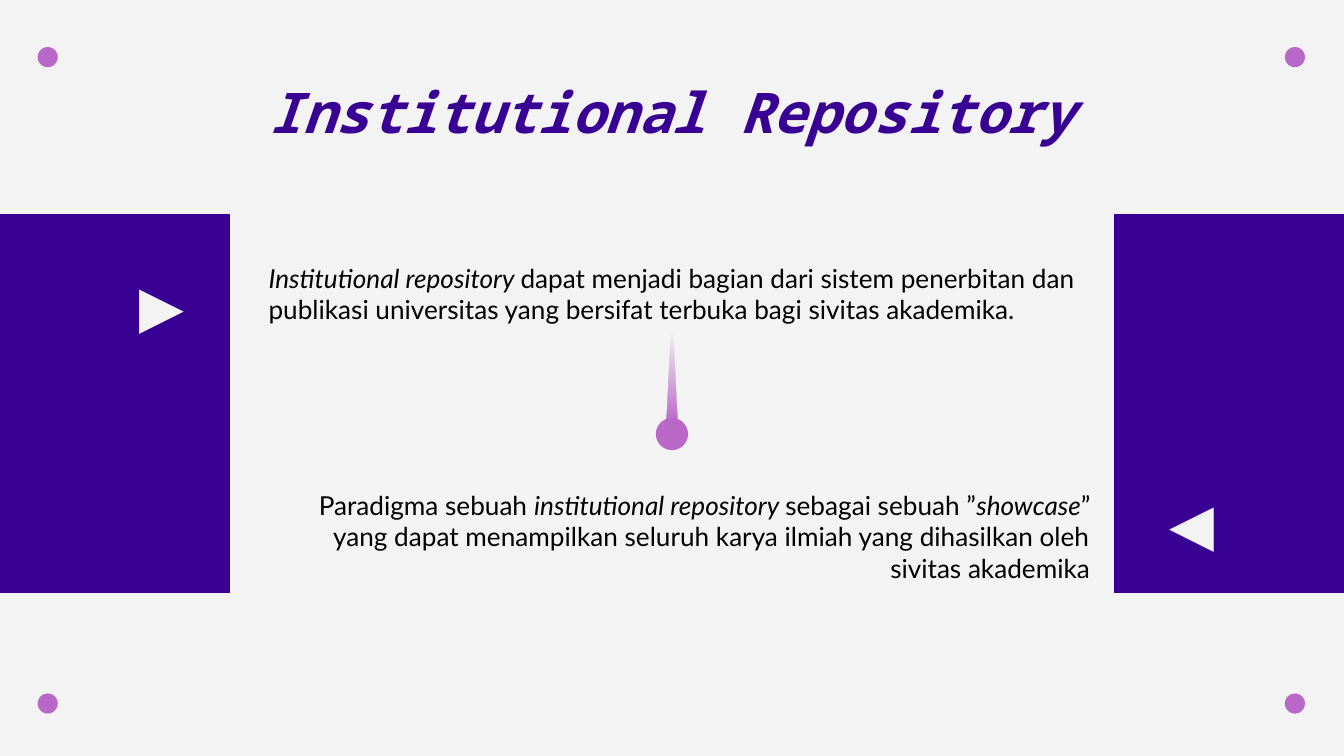
from copy import deepcopy

from lxml.etree import SubElement
from pptx import Presentation
from pptx.dml.color import RGBColor
from pptx.enum.shapes import MSO_SHAPE as SHAPE
from pptx.enum.text import MSO_ANCHOR as ANCHOR, PP_ALIGN as ALIGN
from pptx.oxml.ns import qn
from pptx.util import Inches, Pt

BACKGROUND = RGBColor(0xF3, 0xF3, 0xF3)
PURPLE = RGBColor(0x38, 0x00, 0x93)
ORCHID = RGBColor(0xBA, 0x68, 0xC8)
BLACK = RGBColor(0x00, 0x00, 0x00)
MONO, BODY = "Noto Sans Mono", "Lato"


def place(sp, left, top, width, height):
    sp.left, sp.top = Inches(left), Inches(top)
    sp.width, sp.height = Inches(width), Inches(height)


def add_shape(s, kind, box, color, outlined=False):
    sp = s.shapes.add_shape(kind, *map(Inches, box))
    sp.shadow.inherit = False
    sp.fill.solid()
    sp.fill.fore_color.rgb = color
    if outlined:
        sp.line.color.rgb = color
        sp.line.width = Pt(0.75)
    else:
        sp.line.fill.background()
    return sp


def set_frame(sp, anchor):
    tf = sp.text_frame
    tf.word_wrap = True
    tf.vertical_anchor = anchor
    tf.margin_left = tf.margin_right = Inches(0.1)
    tf.margin_top = tf.margin_bottom = Inches(0.1)
    return tf


def style_run(r, font, size, color, bold=False, italic=False):
    r.font.name, r.font.size = font, Pt(size)
    r.font.color.rgb = color
    r.font.bold, r.font.italic = bold, italic


def set_title(s, text):
    title = s.shapes.title
    place(title, 0.78, 0.59, 8.44, 0.59)
    tf = set_frame(title, ANCHOR.BOTTOM)
    tf.text = text
    p = tf.paragraphs[0]
    p.alignment = ALIGN.CENTER
    style_run(p.runs[0], MONO, 30, PURPLE, bold=True, italic=True)


def add_arrow(s, box, symbol):
    sp = add_shape(s, SHAPE.RECTANGLE, box, PURPLE)
    tf = set_frame(sp, ANCHOR.MIDDLE)
    tf.text = symbol
    p = tf.paragraphs[0]
    p.alignment = ALIGN.CENTER
    style_run(p.runs[0], MONO, 40, BACKGROUND, bold=True)


def add_body(s, box, parts, align, indent=0):
    """Add a paragraph from (text, italic) parts."""
    sp = s.shapes.add_textbox(*map(Inches, box))
    p = set_frame(sp, ANCHOR.TOP).paragraphs[0]
    p.alignment = align
    if indent:
        p._p.get_or_add_pPr().set("marL", str(Inches(indent)))
    for text, italic in parts:
        r = p.add_run()
        r.text = text
        style_run(r, BODY, 14, BLACK, italic=italic)


def fade_upwards(sp, color):
    """Fade from solid at the base to clear at 80 % of the height."""
    sp.fill.gradient()
    sp.fill.gradient_angle = 90
    base, clear = sp.fill.gradient_stops
    base.color.rgb = clear.color.rgb = color
    base.position, clear.position = 0, 0.8
    gs = list(sp._element.iter(qn("a:gs")))[1]
    SubElement(gs[0], qn("a:alpha")).set("val", "0")
    end = deepcopy(gs)
    end.set("pos", "100000")
    gs.addnext(end)


def main():
    prs = Presentation()
    prs.slide_width = Inches(10)
    prs.slide_height = prs.slide_width * 9 // 16
    s = prs.slides.add_slide(prs.slide_layouts[5])
    s.background.fill.solid()
    s.background.fill.fore_color.rgb = BACKGROUND

    # Corner dots and side panels
    for left in (0.28, 9.56):
        for top in (0.35, 5.16):
            add_shape(s, SHAPE.OVAL, (left, top, 0.15, 0.15), ORCHID)
    for left in (0, 8.29):
        add_shape(s, SHAPE.RECTANGLE, (left, 1.6, 1.71, 2.81), PURPLE, outlined=True)

    set_title(s, "Institutional Repository")

    # Statements with their arrows
    add_body(s, (1.75, 1.85, 6.5, 0.56), [
        ("Institutional repository ", True),
        ("dapat menjadi bagian dari sistem penerbitan dan publikasi universitas "
         "yang bersifat terbuka bagi sivitas akademika.", False),
    ], ALIGN.LEFT, indent=0.15)
    add_arrow(s, (0.74, 1.98, 0.93, 0.56), "►")
    add_arrow(s, (8.4, 3.6, 0.93, 0.56), "◄")
    add_body(s, (2.02, 3.54, 6.19, 0.56), [
        ("Paradigma sebuah ", False),
        ("institutional repository ", True),
        ("sebagai sebuah ”", False),
        ("showcase", True),
        ("” yang dapat menampilkan seluruh karya ilmiah yang dihasilkan oleh "
         "sivitas akademika", False),
    ], ALIGN.RIGHT)

    # Central comet
    add_shape(s, SHAPE.OVAL, (4.88, 3.11, 0.24, 0.24), ORCHID)
    tail = add_shape(s, SHAPE.ISOSCELES_TRIANGLE, (4.96, 2.29, 0.08, 0.87), ORCHID)
    fade_upwards(tail, ORCHID)

    prs.save("out.pptx")


if __name__ == "__main__":
    main()
